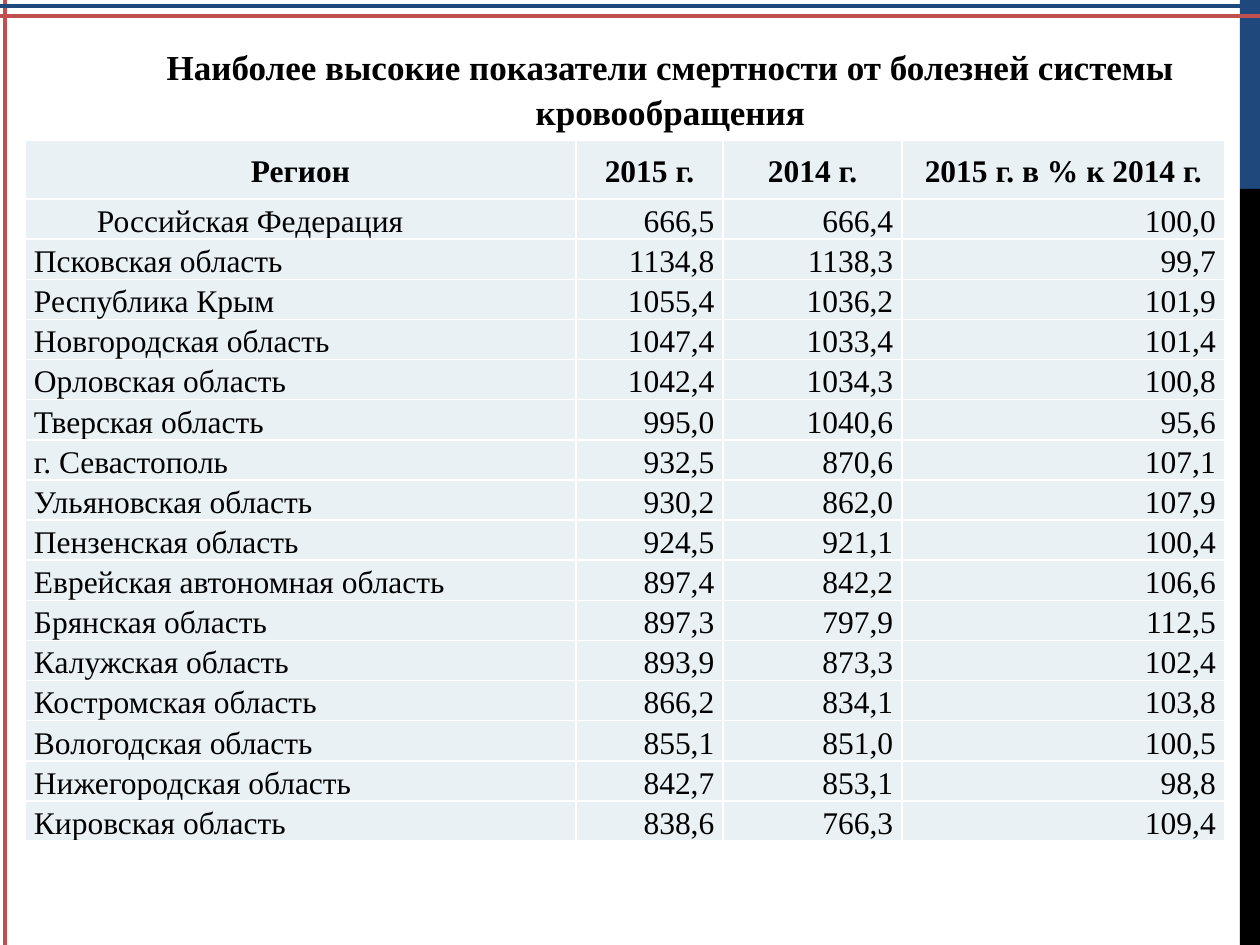
from lxml import etree
from pptx import Presentation, util as u
from pptx.dml.color import RGBColor
from pptx.enum import shapes, text
from pptx.oxml import ns

HEAD = "Наиболее высокие показатели смертности от болезней системы кровообращения"
COLS = ["Регион", "2015 г.", "2014 г.", "2015 г. в % к 2014 г."]
ROWS = [
    ("Российская Федерация", "666,5", "666,4", "100,0"),
    ("Псковская область", "1134,8", "1138,3", "99,7"),
    ("Республика Крым", "1055,4", "1036,2", "101,9"),
    ("Новгородская область", "1047,4", "1033,4", "101,4"),
    ("Орловская область", "1042,4", "1034,3", "100,8"),
    ("Тверская область", "995,0", "1040,6", "95,6"),
    ("г. Севастополь", "932,5", "870,6", "107,1"),
    ("Ульяновская область", "930,2", "862,0", "107,9"),
    ("Пензенская область", "924,5", "921,1", "100,4"),
    ("Еврейская автономная область", "897,4", "842,2", "106,6"),
    ("Брянская область", "897,3", "797,9", "112,5"),
    ("Калужская область", "893,9", "873,3", "102,4"),
    ("Костромская область", "866,2", "834,1", "103,8"),
    ("Вологодская область", "855,1", "851,0", "100,5"),
    ("Нижегородская область", "842,7", "853,1", "98,8"),
    ("Кировская область", "838,6", "766,3", "109,4"),
]
WIDE, HIGH = 10, 7.5
SPANS = [4.37, 1.17, 1.42, 2.56]
TOP, STEP = 0.47, 0.31
FONT = "Times New Roman"
BLUE = RGBColor(0x1F, 0x49, 0x7D)
RED = RGBColor(0xC0, 0x50, 0x4D)
BLACK = RGBColor(0, 0, 0)
PALE = RGBColor(0xE9, 0xF1, 0xF5)
WHITE = RGBColor(0xFF, 0xFF, 0xFF)
BARS = [(0, 0.2, BLUE), (0.2, 0.8, BLACK)]
LINES = [
    (WIDE, 0.13, 0, 0.13, RED),
    (0.04, 0, 0.04, HIGH, RED),
    (0, 0.05, WIDE, 0.05, BLUE),
]
ALIGN = text.PP_ALIGN


def write(para, words, size, bold, align, space):
    para.alignment = align
    para.line_spacing = space
    run = para.add_run()
    run.text = words
    font = run.font
    font.name, font.size, font.bold = FONT, u.Pt(size), bold
    font.color.rgb = BLACK


def edge(cell):
    props = cell._tc.get_or_add_tcPr()
    for i, side in enumerate(("lnL", "lnR", "lnT", "lnB")):
        line = etree.Element(ns.qn("a:" + side), w=str(u.Pt(1)))
        fill = etree.SubElement(line, ns.qn("a:solidFill"))
        etree.SubElement(fill, ns.qn("a:srgbClr"), val=str(WHITE))
        props.insert(i, line)


def frame(slide):
    for top, part, hue in BARS:
        bar = slide.shapes.add_shape(
            shapes.MSO_SHAPE.RECTANGLE, u.Inches(9.84), u.Inches(top * HIGH),
            u.Inches(0.16), u.Inches(part * HIGH))
        bar.shadow.inherit = False
        bar.fill.solid()
        bar.fill.fore_color.rgb = hue
        bar.line.fill.background()
    for *ends, hue in LINES:
        line = slide.shapes.add_connector(
            shapes.MSO_CONNECTOR.STRAIGHT, *map(u.Inches, ends))
        line.line.color.rgb = hue
        line.line.width = u.Pt(2.25)
        etree.SubElement(line._element.spPr, ns.qn("a:effectLst"))


def grid(slide):
    data = [COLS, *ROWS]
    tall = TOP + STEP * len(ROWS)
    table = slide.shapes.add_table(
        len(data), len(COLS), u.Inches(0.2), u.Inches(1.11),
        u.Inches(sum(SPANS)), u.Inches(tall)).table
    for col, span in zip(table.columns, SPANS):
        col.width = u.Inches(span)
    for r, row in enumerate(data):
        head = r == 0
        table.rows[r].height = u.Inches(TOP if head else STEP)
        for c, words in enumerate(row):
            cell = table.cell(r, c)
            cell.fill.solid()
            cell.fill.fore_color.rgb = PALE
            cell.margin_left = cell.margin_right = u.Inches(0.07)
            cell.margin_top = cell.margin_bottom = 0
            anchor = text.MSO_ANCHOR
            cell.vertical_anchor = anchor.MIDDLE if head else anchor.BOTTOM
            align = ALIGN.CENTER if head else ALIGN.RIGHT if c else ALIGN.LEFT
            write(cell.text_frame.paragraphs[0], words, 18, head, align, 1.15)
            edge(cell)
    total = table.cell(1, 0).text_frame.paragraphs[0]
    total._p.get_or_add_pPr().set("indent", str(u.Inches(0.5)))


def title(slide):
    box = slide.shapes.add_textbox(
        u.Inches(0.91), u.Inches(0.29), u.Inches(8.82), u.Inches(0.8))
    box.text_frame.word_wrap = True
    para = box.text_frame.paragraphs[0]
    write(para, HEAD, 20, True, ALIGN.CENTER, 1.07)
    para.space_after = u.Pt(8)


def main():
    deck = Presentation()
    deck.slide_width, deck.slide_height = u.Inches(WIDE), u.Inches(HIGH)
    slide = deck.slides.add_slide(deck.slide_layouts[6])
    frame(slide)
    grid(slide)
    title(slide)
    deck.save("out.pptx")


if __name__ == "__main__":
    main()
